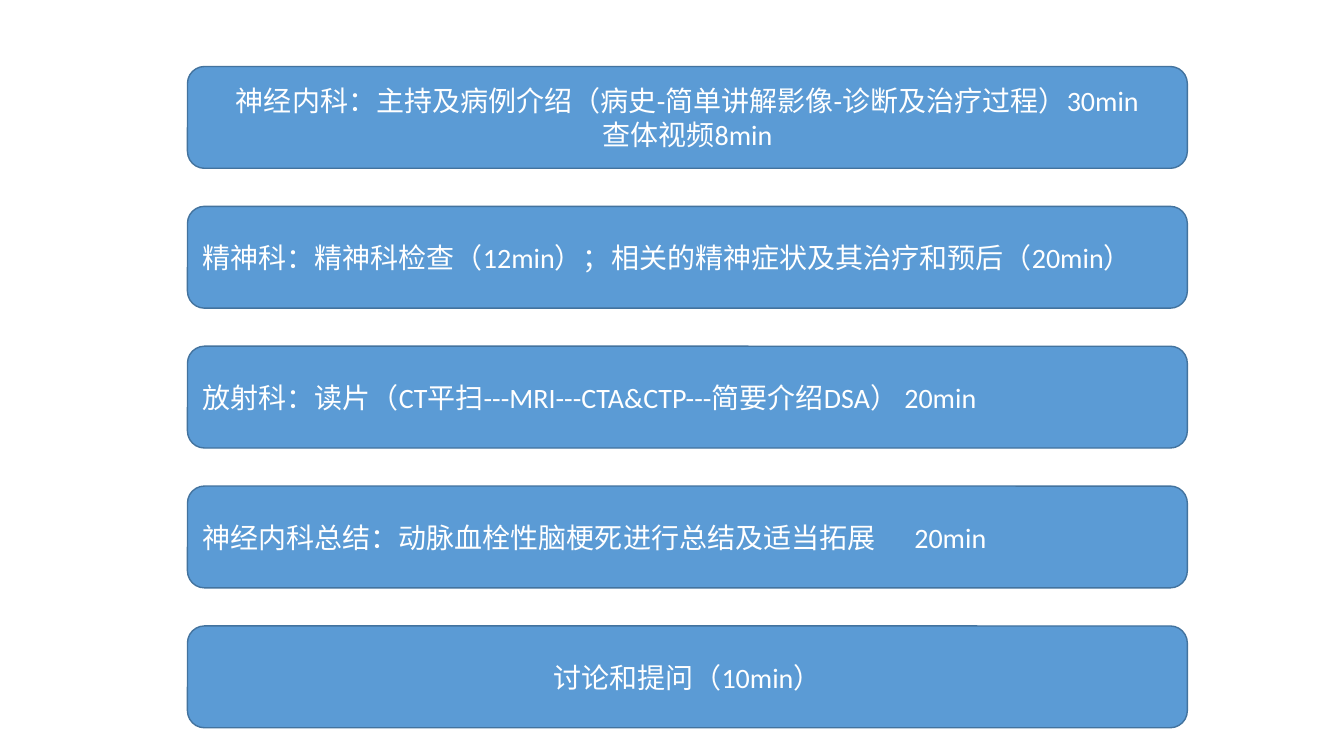
from lxml.etree import SubElement
from pptx import Presentation
from pptx.dml.color import RGBColor
from pptx.enum.shapes import MSO_SHAPE
from pptx.enum.text import MSO_ANCHOR, PP_ALIGN
from pptx.oxml.ns import qn
from pptx.util import Pt

theme = {
    "fill": RGBColor(0x5B, 0x9B, 0xD5),
    "line": RGBColor(0x43, 0x73, 0x9E),
    "text": RGBColor(0xFF, 0xFF, 0xFF),
    "font": "Calibri",
    "size": Pt(20),
}
left, top, width, height, pitch = 133.9, 47.5, 714.2, 72.7, 99.9
tab = 508.6
mid, start = PP_ALIGN.CENTER, PP_ALIGN.LEFT

steps = [
    (mid, ["神经内科：主持及病例介绍（病史-简单讲解影像-诊断及治疗过程）30min",
           "查体视频8min"]),
    (start, ["精神科：精神科检查（12min）；相关的精神症状及其治疗和预后（20min）"]),
    (start, ["放射科：读片（CT平扫---MRI---CTA&CTP---简要介绍DSA） 20min"]),
    (start, ["神经内科总结：动脉血栓性脑梗死进行总结及适当拓展\t20min"]),
    (mid, ["讨论和提问（10min）"]),
]

deck = Presentation()
deck.slide_width, deck.slide_height = Pt(960), Pt(540)
slide = deck.slides.add_slide(deck.slide_layouts[6])

for row, (align, lines) in enumerate(steps):
    box = slide.shapes.add_shape(
        MSO_SHAPE.ROUNDED_RECTANGLE,
        Pt(left), Pt(top + row * pitch), Pt(width), Pt(height))
    box.shadow.inherit = False
    box.fill.solid()
    box.fill.fore_color.rgb = theme["fill"]
    box.line.color.rgb = theme["line"]
    box.line.width = Pt(1)
    frame = box.text_frame
    format = {"word_wrap": True, "vertical_anchor": MSO_ANCHOR.MIDDLE}
    for key, value in format.items():
        setattr(frame, key, value)
    frame.text = "\n".join(lines)
    for para in frame.paragraphs:
        para.alignment = align
        if "\t" in para.text:
            stops = SubElement(para._p.get_or_add_pPr(), qn("a:tabLst"))
            SubElement(stops, qn("a:tab"), pos=str(Pt(tab)), algn="l")
        for run in para.runs:
            for key, value in {"name": theme["font"], "size": theme["size"]}.items():
                setattr(run.font, key, value)
            run.font.color.rgb = theme["text"]

deck.save("out.pptx")
